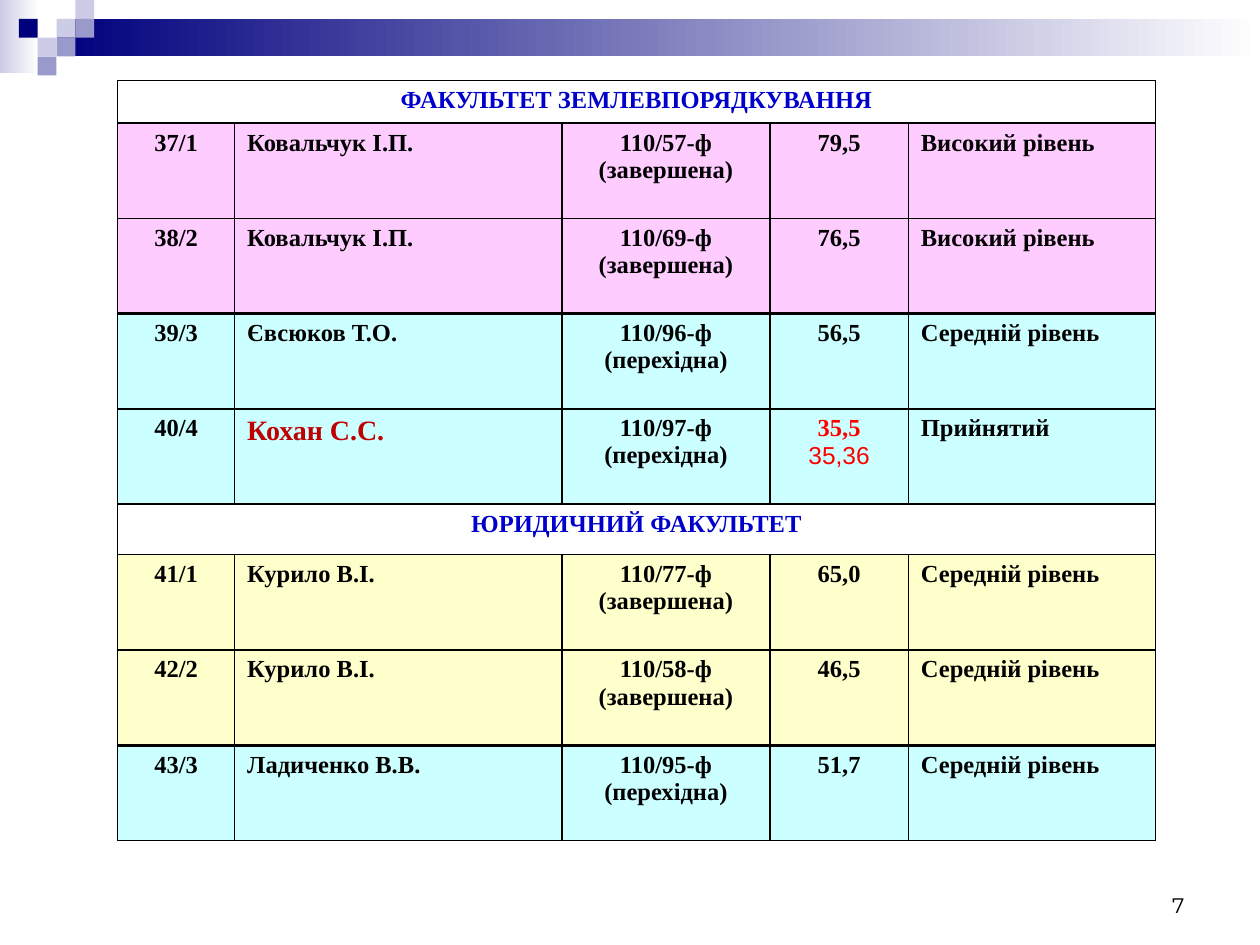
from lxml.etree import SubElement as Sub
from pptx import Presentation
from pptx.dml.color import RGBColor as RGB
from pptx.enum.shapes import MSO_SHAPE as Shape
from pptx.enum.text import MSO_ANCHOR as Anchor, PP_ALIGN as Align
from pptx.oxml import parse_xml
from pptx.oxml.ns import nsdecls, qn
from pptx.util import Cm, Pt

NAVY = RGB(0, 0, 0x7D)
LILAC = RGB(0xCC, 0xCC, 0xE6)
MAUVE = RGB(0x99, 0x99, 0xCC)
WHITE = RGB(0xFF, 0xFF, 0xFF)
BLACK = RGB(0, 0, 0)
BLUE = RGB(0, 0, 0xCC)
RED = RGB(0xFF, 0, 0)
DARK = RGB(0xC0, 0, 0)
PINK = RGB(0xFF, 0xCC, 0xFF)
CYAN = RGB(0xCC, 0xFF, 0xFF)
CREAM = RGB(0xFF, 0xFF, 0xCC)

STEP = 0.38
TILES = [(2, 1, LILAC), (3, 0, LILAC), (3, 1, MAUVE), (1, 2, LILAC),
         (0, 1, NAVY), (2, 2, MAUVE), (1, 3, MAUVE)]

COLS = [2.36, 6.6, 4.19, 2.79, 4.98]
TALL = 1.92
HEADS = {0: 0.86, 5: 1.02}
HEAVY = {2, 7}
DONE = "(завершена)"
OPEN = "(перехідна)"
HIGH = "Високий рівень"
MID = "Середній рівень"
ROWS = [
    (WHITE, ["ФАКУЛЬТЕТ ЗЕМЛЕВПОРЯДКУВАННЯ"]),
    (PINK, ["37/1", "Ковальчук І.П.", f"110/57-ф\n{DONE}", "79,5", HIGH]),
    (PINK, ["38/2", "Ковальчук І.П.", f"110/69-ф\n{DONE}", "76,5", HIGH]),
    (CYAN, ["39/3", "Євсюков Т.О.", f"110/96-ф\n{OPEN}", "56,5", MID]),
    (CYAN, ["40/4", "Кохан С.С.", f"110/97-ф\n{OPEN}", "35,5\n35,36", "Прийнятий"]),
    (WHITE, ["ЮРИДИЧНИЙ ФАКУЛЬТЕТ"]),
    (CREAM, ["41/1", "Курило В.І.", f"110/77-ф\n{DONE}", "65,0", MID]),
    (CREAM, ["42/2", "Курило В.І.", f"110/58-ф\n{DONE}", "46,5", MID]),
    (CYAN, ["43/3", "Ладиченко В.В.", f"110/95-ф\n{OPEN}", "51,7", MID]),
]


def style(par, size=14, color=BLACK, name="Times New Roman", bold=True):
    for run in par.runs:
        font = run.font
        font.size, font.name, font.bold = Pt(size), name, bold
        font.color.rgb = color


def add_rect(slide, left, top, width, height, start, end=None):
    rect = slide.shapes.add_shape(
        Shape.RECTANGLE, Cm(left), Cm(top), Cm(width), Cm(height))
    rect.shadow.inherit = False
    rect.line.fill.background()
    if end is None:
        rect.fill.solid()
        rect.fill.fore_color.rgb = start
        return
    rect.fill.gradient()
    rect.fill.gradient_angle = 0
    for stop, color, pos in zip(rect.fill.gradient_stops, (start, end), (0, 1)):
        stop.color.rgb = color
        stop.position = pos


def add_band(slide):
    add_rect(slide, 0, 0, 0.79, 1.47, LILAC, WHITE)
    add_rect(slide, 1.14, STEP, 24.26, 0.76, NAVY, WHITE)
    for col, row, color in TILES:
        add_rect(slide, STEP * (col + 1), STEP * row, STEP, STEP, color)


def set_edges(cell, top, base):
    props = cell._tc.get_or_add_tcPr()
    for spot, (side, size) in enumerate(
            [("L", 1), ("R", 1), ("T", top), ("B", base)]):
        line = parse_xml(f'<a:ln{side} {nsdecls("a")} w="{Pt(size)}"/>')
        fill = Sub(line, qn("a:solidFill"))
        Sub(fill, qn("a:srgbClr"), val=str(BLACK))
        props.insert(spot, line)


def fill_cell(cell, text, col, head):
    cell.text_frame.text = text
    for par in cell.text_frame.paragraphs:
        mid = head or col in (0, 2, 3)
        par.alignment = Align.CENTER if mid else Align.LEFT
        if col < 4:
            props = par._p.get_or_add_pPr()
            props.set("marL", str(Cm(0.97)))
            props.set("indent", str(-Cm(0.97)))
        style(par, color=BLUE if head else BLACK)


def add_grid(slide):
    frame = slide.shapes.add_table(
        len(ROWS), len(COLS), Cm(2.37), Cm(1.62), Cm(sum(COLS)), Cm(15.3))
    table = frame.table
    table.first_row = table.horz_banding = False
    for col, width in zip(table.columns, COLS):
        col.width = Cm(width)
    for num, (color, texts) in enumerate(ROWS):
        head = num in HEADS
        table.rows[num].height = Cm(HEADS.get(num, TALL))
        for col in range(len(COLS)):
            cell = table.cell(num, col)
            cell.fill.solid()
            cell.fill.fore_color.rgb = color
            set_edges(cell, 2 if num - 1 in HEAVY else 1,
                      2 if num in HEAVY else 1)
        if head:
            table.cell(num, 0).merge(table.cell(num, len(COLS) - 1))
        for col, text in enumerate(texts):
            fill_cell(table.cell(num, col), text, col, head)
    style(table.cell(4, 1).text_frame.paragraphs[0], 16, DARK)
    score, mean = table.cell(4, 3).text_frame.paragraphs
    style(score, color=RED)
    style(mean, color=RED, name="Arial", bold=False)


def add_number(slide):
    box = slide.shapes.add_textbox(Cm(18.2), Cm(17.35), Cm(5.93), Cm(1.27))
    frame = box.text_frame
    frame.word_wrap = True
    frame.vertical_anchor = Anchor.BOTTOM
    frame.text = "7"
    par = frame.paragraphs[0]
    par.alignment = Align.RIGHT
    style(par, 12, name="Montserrat", bold=False)


def main():
    deck = Presentation()
    deck.slide_width, deck.slide_height = Cm(25.4), Cm(19.05)
    slide = deck.slides.add_slide(deck.slide_layouts[6])
    add_band(slide)
    add_grid(slide)
    add_number(slide)
    deck.save("out.pptx")


if __name__ == "__main__":
    main()
